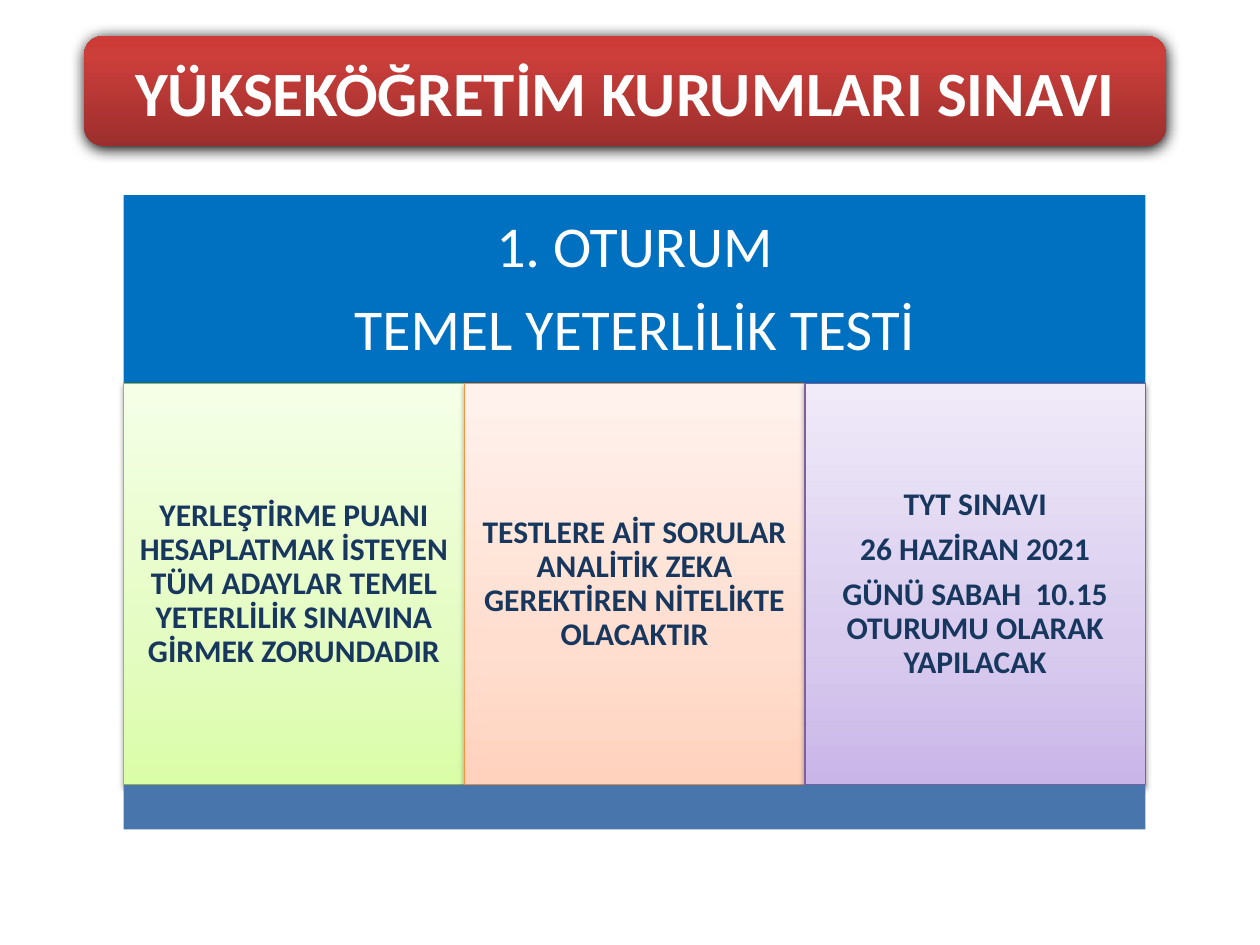
"""Builds the exam session slide with a banner title and three panels."""
from lxml import etree
from pptx import Presentation
from pptx.dml.color import RGBColor
from pptx.enum.shapes import MSO_SHAPE
from pptx.enum.text import MSO_ANCHOR, PP_ALIGN
from pptx.oxml.ns import qn
from pptx.util import Pt

RECT, ROUND = MSO_SHAPE.RECTANGLE, MSO_SHAPE.ROUNDED_RECTANGLE
MIDDLE, CENTER = MSO_ANCHOR.MIDDLE, PP_ALIGN.CENTER

THEME = {
    "font": "Calibri",
    "title_size": 36, "header_size": 33, "panel_size": 18,
    "white": "FFFFFF", "navy": "17375E",
    "header": "0070C0", "footer": "4875AC",
    "banner": [(0, "9C2F2D"), (80, "CB3E3A"), (100, "CE3B37")],
    "green": [(0, "DAFDA7"), (35, "E4FCC2"), (100, "F5FFE7")],
    "orange": [(0, "FFD2BD"), (35, "FFDED0"), (100, "FFF2ED")],
    "purple": [(0, "C9B5E8"), (35, "D8CBEE"), (100, "F0EAF9")],
    "green_line": "98B955", "orange_line": "F69240", "purple_line": "7D60A0",
}


def add_box(kind, x, y, w, h, fill, line=None, shadow=None):
    sp = slide.shapes.add_shape(kind, Pt(x), Pt(y), Pt(w), Pt(h))
    sp.shadow.inherit = False
    if isinstance(fill, str):
        sp.fill.solid()
        sp.fill.fore_color.rgb = RGBColor.from_string(fill)
    else:
        sp.fill.gradient()
        sp.fill.gradient_angle = 90
        stops = sp.element.spPr.find(".//" + qn("a:gsLst"))
        for gs in list(stops):
            stops.remove(gs)
        for pos, color in fill:
            gs = etree.SubElement(stops, qn("a:gs"), pos=str(pos * 1000))
            etree.SubElement(gs, qn("a:srgbClr"), val=color)
    if line:
        sp.line.color.rgb = RGBColor.from_string(line)
        sp.line.width = Pt(0.75)
    else:
        sp.line.fill.background()
    if shadow:
        alpha, blur, dist = shadow
        effects = sp.element.spPr.find(qn("a:effectLst"))
        outer = etree.SubElement(effects, qn("a:outerShdw"), blurRad=str(Pt(blur)),
                                 dist=str(Pt(dist)), dir="5400000", rotWithShape="0")
        clr = etree.SubElement(outer, qn("a:srgbClr"), val="000000")
        etree.SubElement(clr, qn("a:alpha"), val=str(alpha * 1000))
    return sp


def write(sp, lines, size, color, bold, inset=None, spacing=None):
    tf = sp.text_frame
    tf.word_wrap = True
    tf.vertical_anchor = MIDDLE
    if inset:
        tf.margin_left = tf.margin_right = tf.margin_top = tf.margin_bottom = Pt(inset)
    for i, line in enumerate(lines):
        p = tf.add_paragraph() if i else tf.paragraphs[0]
        p.alignment = CENTER
        if spacing:
            p.line_spacing = spacing
            p.space_after = Pt(size * 0.35)
        r = p.add_run()
        r.text = line
        r.font.name = THEME["font"]
        r.font.size = Pt(size)
        r.font.bold = bold
        r.font.color.rgb = RGBColor.from_string(color)


prs = Presentation()
prs.slide_width, prs.slide_height = Pt(720), Pt(540)
slide = prs.slides.add_slide(prs.slide_layouts[5])

left, width = 70.6, 584
header_top, panel_top, footer_top = 111.5, 219, 448.5
panel_w = width / 3

header = add_box(RECT, left, header_top, width, 109, THEME["header"])
write(header, ["1. OTURUM", "TEMEL YETERLİLİK TESTİ"],
      THEME["header_size"], THEME["white"], False, 10, 0.9)

panels = [
    ("green", ["YERLEŞTİRME PUANI HESAPLATMAK İSTEYEN TÜM ADAYLAR TEMEL "
               "YETERLİLİK SINAVINA GİRMEK ZORUNDADIR"]),
    ("orange", ["TESTLERE AİT SORULAR ANALİTİK ZEKA GEREKTİREN NİTELİKTE OLACAKTIR"]),
    ("purple", ["TYT SINAVI", "26 HAZİRAN 2021",
                "GÜNÜ SABAH  10.15 OTURUMU OLARAK YAPILACAK"]),
]
for i, (name, lines) in enumerate(panels):
    panel = add_box(RECT, left + i * panel_w, panel_top, panel_w, footer_top - panel_top,
                    THEME[name], THEME[name + "_line"], (38, 3.1, 1.6))
    write(panel, lines, THEME["panel_size"], THEME["navy"], True, 5, 0.9)

add_box(RECT, left, footer_top, width, 25.5, THEME["footer"])

banner = add_box(ROUND, 48.2, 20.7, 618, 62.7, THEME["banner"], shadow=(100, 8.5, 1))
title = slide.shapes.title
title.left, title.top = banner.left, banner.top
title.width, title.height = banner.width, banner.height
write(title, ["YÜKSEKÖĞRETİM KURUMLARI SINAVI"], THEME["title_size"], THEME["white"], True)
banner.element.addnext(title.element)

prs.save("out.pptx")
